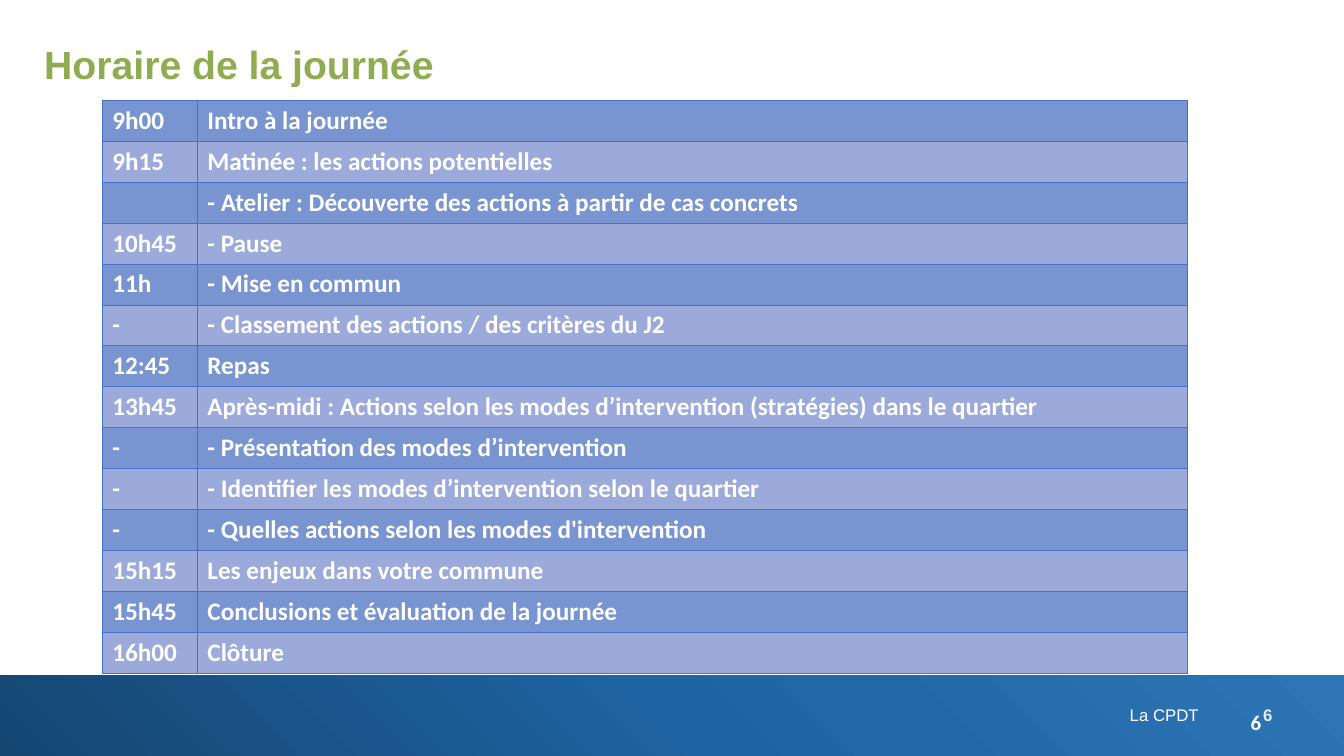
from copy import deepcopy
from dataclasses import dataclass

from lxml.etree import SubElement
from pptx import Presentation
from pptx.dml.color import RGBColor
from pptx.enum.shapes import MSO_SHAPE
from pptx.enum.text import PP_ALIGN
from pptx.oxml.ns import qn
from pptx.util import Pt


@dataclass(frozen=True)
class Theme:
    title_color: str = "90AC50"
    white: str = "FFFFFF"
    number_color: str = "E7E6E6"
    border: str = "4472C4"
    row_fills: tuple = ("7894D1", "9BAADA")
    band_stops: tuple = ("154672", "1E63A2", "2E75B6")
    heading_font: str = "Arial"
    body_font: str = "Calibri"
    title_size: int = 28
    table_size: int = 18
    page_size: int = 15
    footer_size: int = 12


THEME = Theme()

SCHEDULE = [
    ("9h00", "Intro à la journée"),
    ("9h15", "Matinée : les actions potentielles"),
    ("", "- Atelier : Découverte des actions à partir de cas concrets"),
    ("10h45", "- Pause"),
    ("11h", "- Mise en commun"),
    ("-", "- Classement des actions / des critères du J2"),
    ("12:45", "Repas"),
    ("13h45", "Après-midi : Actions selon les modes d’intervention (stratégies) dans le quartier"),
    ("-", "- Présentation des modes d’intervention"),
    ("-", "- Identifier les modes d’intervention selon le quartier"),
    ("-", "- Quelles actions selon les modes d'intervention"),
    ("15h15", "Les enjeux dans votre commune"),
    ("15h45", "Conclusions et évaluation de la journée"),
    ("16h00", "Clôture"),
]


def write_text(para, text, font, size, color, bold=True, align=PP_ALIGN.LEFT):
    para.alignment = align
    para.font.size = Pt(size)
    if text:
        span = para.add_run()
        span.text = text
        span.font.name = font
        span.font.size = Pt(size)
        span.font.bold = bold
        span.font.color.rgb = RGBColor.from_string(color)


def add_label(page, left, top, width, height, text, font, size, color, **style):
    box = page.shapes.add_textbox(Pt(left), Pt(top), Pt(width), Pt(height))
    box.text_frame.word_wrap = True
    para = box.text_frame.paragraphs[0]
    write_text(para, text, font, size, color, **style)
    return para


def add_footer_band(page):
    band = page.shapes.add_shape(MSO_SHAPE.RECTANGLE, Pt(0), Pt(482.4), Pt(960), Pt(57.6))
    band.shadow.inherit = False
    band.line.fill.background()
    band.fill.gradient()
    band.fill.gradient_angle = 45
    # A new gradient has two stops; add the middle one
    stop_list = band.element.spPr.find(qn("a:gradFill")).find(qn("a:gsLst"))
    stop_list.insert(1, deepcopy(stop_list[0]))
    for index, stop in enumerate(band.fill.gradient_stops):
        stop.position = index / 2
        stop.color.rgb = RGBColor.from_string(THEME.band_stops[index])


def add_borders(cell):
    properties = cell._tc.get_or_add_tcPr()
    for side in ("a:lnL", "a:lnR", "a:lnT", "a:lnB"):
        line = SubElement(properties, qn(side), w=str(Pt(0.5)))
        fill = SubElement(line, qn("a:solidFill"))
        SubElement(fill, qn("a:srgbClr"), val=THEME.border)


def add_schedule(page):
    widths = (68, 707.25)
    row_height = 29.25
    frame = page.shapes.add_table(
        len(SCHEDULE), len(widths), Pt(73), Pt(71.6),
        Pt(sum(widths)), Pt(row_height * len(SCHEDULE)))
    table = frame.table
    for column, width in zip(table.columns, widths):
        column.width = Pt(width)
    for row_index, entry in enumerate(SCHEDULE):
        table.rows[row_index].height = Pt(row_height)
        row_fill = RGBColor.from_string(THEME.row_fills[row_index % 2])
        for column_index, text in enumerate(entry):
            cell = table.cell(row_index, column_index)
            add_borders(cell)
            cell.fill.solid()
            cell.fill.fore_color.rgb = row_fill
            align = PP_ALIGN.LEFT if column_index else PP_ALIGN.JUSTIFY
            write_text(cell.text_frame.paragraphs[0], text, THEME.body_font,
                       THEME.table_size, THEME.white, align=align)


def main():
    deck = Presentation()
    deck.slide_width, deck.slide_height = Pt(960), Pt(540)
    page = deck.slides.add_slide(deck.slide_layouts[6])

    # Footer
    add_footer_band(page)
    add_label(page, 597, 499.7, 266.4, 21.6, "La CPDT", THEME.heading_font,
              THEME.footer_size, THEME.white, bold=False, align=PP_ALIGN.RIGHT)
    add_label(page, 862.6, 499.7, 53.3, 21.6, "6", THEME.heading_font,
              THEME.footer_size, THEME.number_color, align=PP_ALIGN.RIGHT)
    add_label(page, 886.3, 503.3, 51, 25.2, "6", THEME.body_font,
              THEME.page_size, THEME.white)

    # Title
    title = add_label(page, 24.5, 28.8, 913, 64.8, "Horaire de la journée",
                      THEME.heading_font, THEME.title_size, THEME.title_color)
    title.line_spacing = 0.9

    # Timetable
    add_schedule(page)

    deck.save("out.pptx")


if __name__ == "__main__":
    main()
